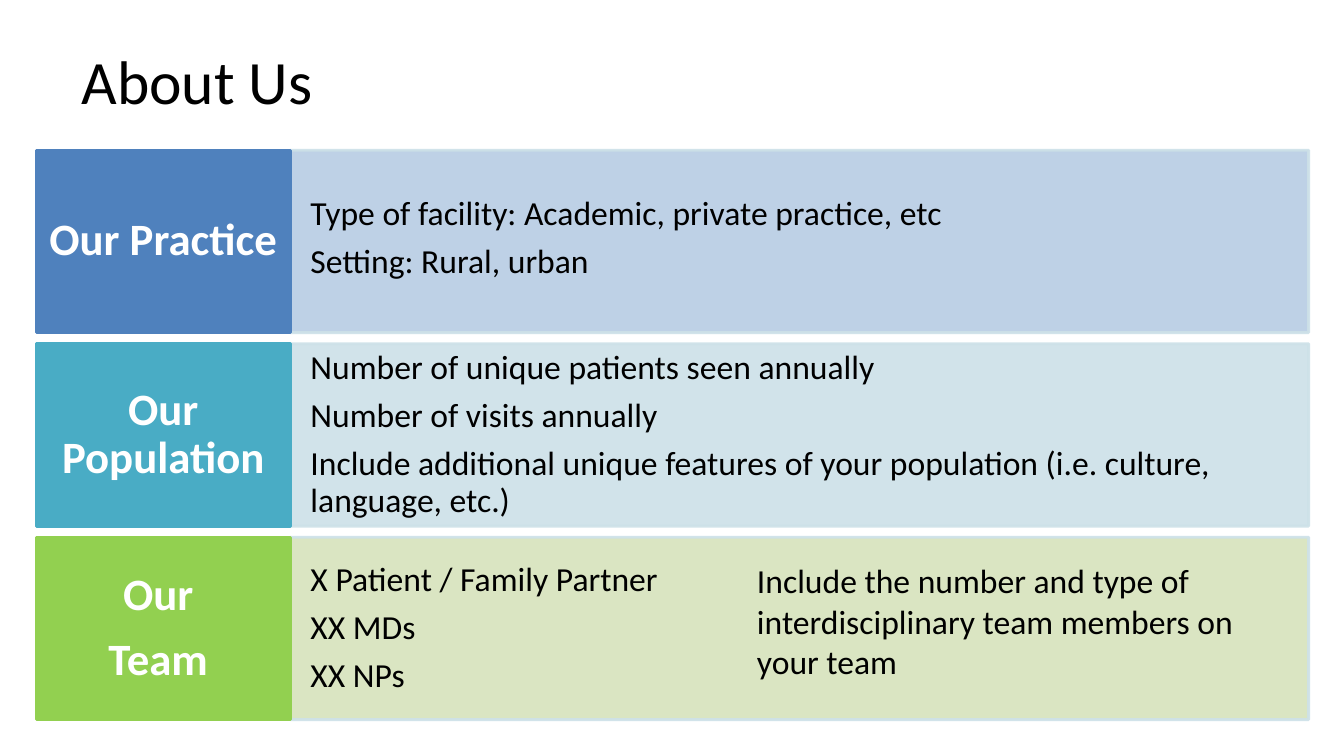
import pptx
import pptx.dml.color
import pptx.enum.shapes
import pptx.enum.text
import pptx.oxml
import pptx.oxml.ns
import pptx.util

Inches, Pt = pptx.util.Inches, pptx.util.Pt
RGBColor = pptx.dml.color.RGBColor
ANCHOR = pptx.enum.text.MSO_ANCHOR
ALIGN = pptx.enum.text.PP_ALIGN

BLACK = RGBColor(0x00, 0x00, 0x00)
WHITE = RGBColor(0xFF, 0xFF, 0xFF)
BLUE = RGBColor(0x4F, 0x81, 0xBD)
PALE_BLUE = RGBColor(0xB7, 0xCC, 0xE4)
TEAL = RGBColor(0x49, 0xAC, 0xC5)
PALE_TEAL = RGBColor(0xCD, 0xE1, 0xE8)
GREEN = RGBColor(0x92, 0xD0, 0x50)
PALE_GREEN = RGBColor(0xD6, 0xE3, 0xBC)

# Text formats: font and paragraph attributes
TITLE = {"font": {"size": Pt(44), "color": BLACK},
         "para": {"line_spacing": 0.9}}
BODY = {"font": {"size": Pt(24), "color": BLACK},
        "para": {"line_spacing": 0.9, "alignment": ALIGN.LEFT}, "gap": 8.4}
LABEL = {"font": {"size": Pt(32), "color": WHITE, "bold": True},
         "para": {"line_spacing": 0.9, "alignment": ALIGN.CENTER}, "gap": 11.2}
NOTE = {"font": {"size": Pt(24), "color": BLACK}, "para": {}}


class SlideBuilder:
    font_name = "Calibri"

    def __init__(self, slide):
        self.s = slide

    def fill_text(self, tf, lines, style, anchor, inset):
        """Fill a text frame, one paragraph per line."""
        dx, dy = map(Inches, inset)
        frame = {"word_wrap": True, "vertical_anchor": anchor, "margin_left": dx,
                 "margin_right": dx, "margin_top": dy, "margin_bottom": dy}
        for name, value in frame.items():
            setattr(tf, name, value)
        for i, line in enumerate(lines):
            p = tf.add_paragraph() if i else tf.paragraphs[0]
            for name, value in style["para"].items():
                setattr(p, name, value)
            if i:
                p.space_before = Pt(style["gap"])
            r = p.add_run()
            r.text = line
            r.font.name = self.font_name
            for name, value in style["font"].items():
                if name == "color":
                    r.font.color.rgb = value
                else:
                    setattr(r.font, name, value)

    def text(self, box, lines, style, anchor=ANCHOR.TOP):
        sp = self.s.shapes.add_textbox(*map(Inches, box))
        self.fill_text(sp.text_frame, lines, style, anchor, (0.1, 0.05))

    def block(self, box, fill, line, lines, style, inset,
              anchor=ANCHOR.MIDDLE, opacity=100):
        sp = self.s.shapes.add_shape(
            pptx.enum.shapes.MSO_SHAPE.RECTANGLE, *map(Inches, box))
        sp.shadow.inherit = False
        sp.fill.solid()
        sp.fill.fore_color.rgb = fill
        sp.line.color.rgb = line
        sp.line.width = Pt(2)
        if opacity < 100:
            for clr in sp._element.spPr.iter(pptx.oxml.ns.qn("a:srgbClr")):
                alpha = pptx.oxml.parse_xml(
                    f'<a:alpha {pptx.oxml.ns.nsdecls("a")} val="{opacity * 1000}"/>')
                clr.append(alpha)
        self.fill_text(sp.text_frame, lines, style, anchor, inset)


# Rows: label lines, label colour, panel colour, panel anchor, panel lines
ROWS = [
    (["Our Practice"], BLUE, PALE_BLUE, ANCHOR.TOP,
     ["Type of facility: Academic, private practice, etc",
      "Setting: Rural, urban"]),
    (["Our Population"], TEAL, PALE_TEAL, ANCHOR.MIDDLE,
     ["Number of unique patients seen annually",
      "Number of visits annually",
      "Include additional unique features of your population "
      "(i.e. culture, language, etc.)"]),
    (["Our ", "Team "], GREEN, PALE_GREEN, ANCHOR.MIDDLE,
     ["X Patient / Family Partner", "XX MDs", "XX NPs"]),
]
LEFT, TOP, LABEL_W, PANEL_W, ROW_H, PITCH = 0.36, 1.49, 2.52, 10.1, 1.81, 1.92


def main():
    prs = pptx.Presentation()
    prs.slide_width, prs.slide_height = Inches(13.33), Inches(7.5)
    b = SlideBuilder(prs.slides.add_slide(prs.slide_layouts[6]))

    # Title
    b.text((0.71, 0.11, 8.62, 1.11), ["About Us"], TITLE, ANCHOR.BOTTOM)

    # Rows of label and panel
    for i, (label, color, pale, anchor, lines) in enumerate(ROWS):
        y = TOP + i * PITCH
        b.block((LEFT + LABEL_W, y, PANEL_W, ROW_H), pale, PALE_TEAL, lines,
                BODY, (0.2, 0.46), anchor, opacity=90)
        b.block((LEFT, y, LABEL_W, ROW_H), color, color, label,
                LABEL, (0.13, 0.18))

    # Team note
    b.text((7.41, 5.51, 5.46, 1.31),
           ["Include the number and type of interdisciplinary "
            "team members on your team"], NOTE)

    prs.save("out.pptx")


if __name__ == "__main__":
    main()
